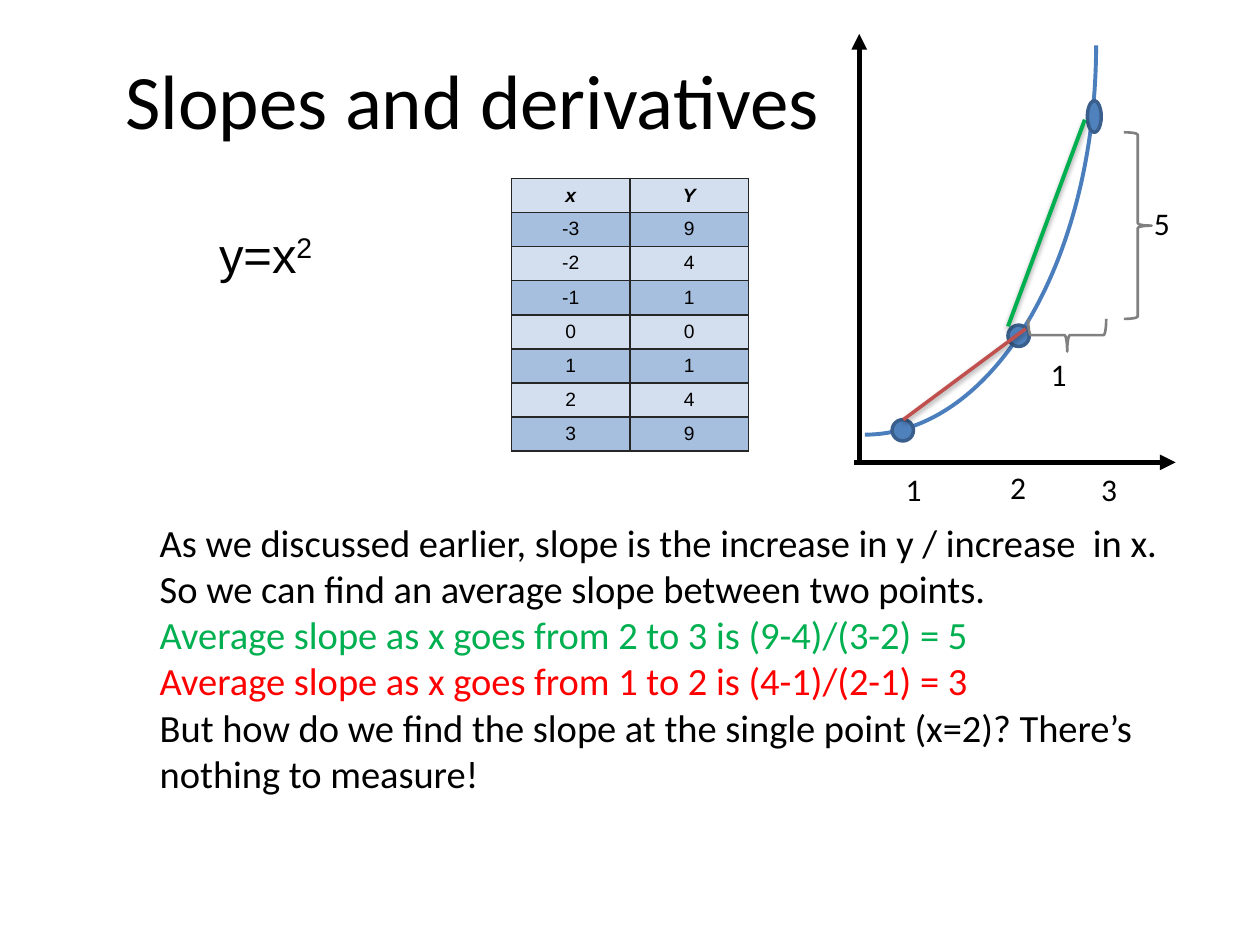
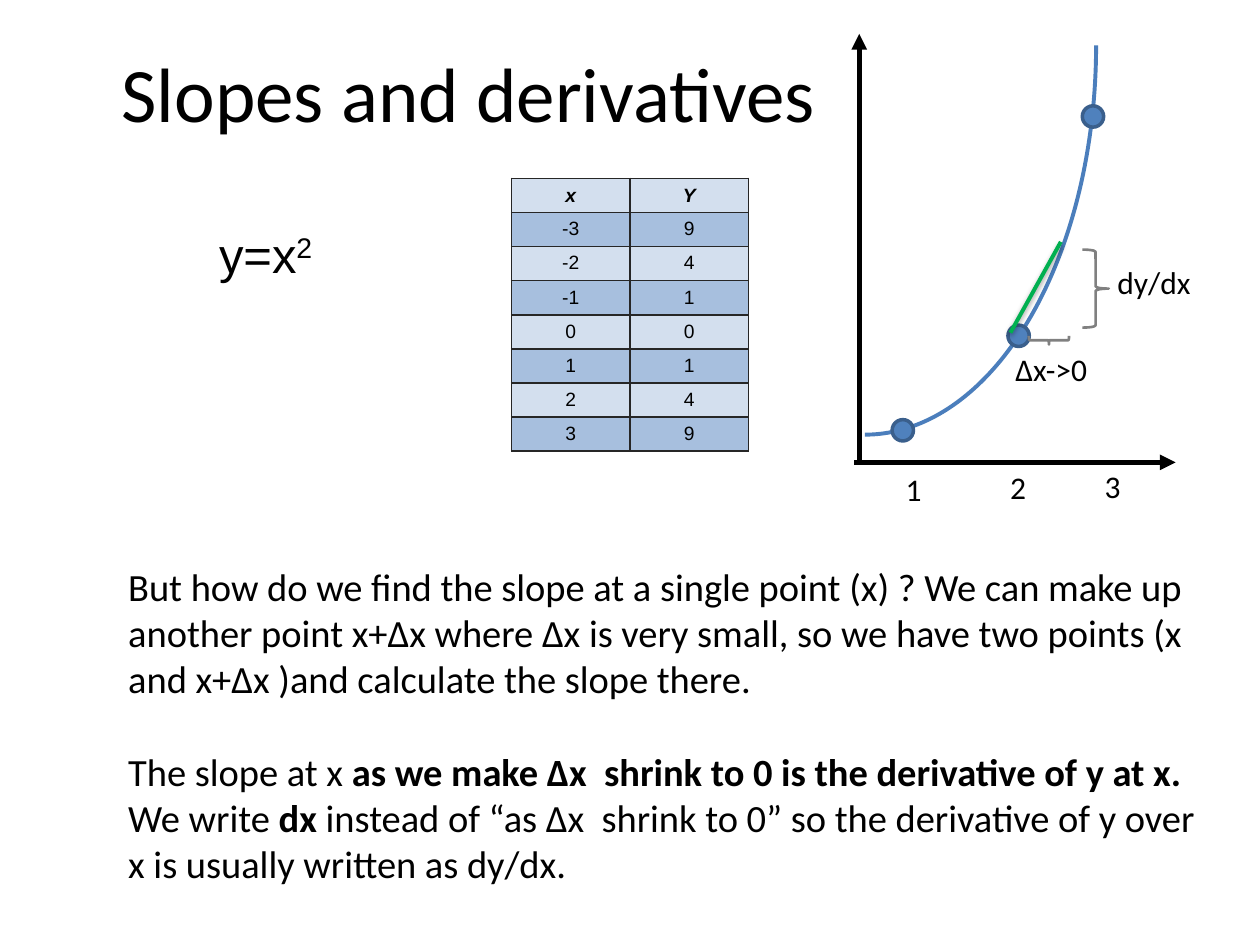
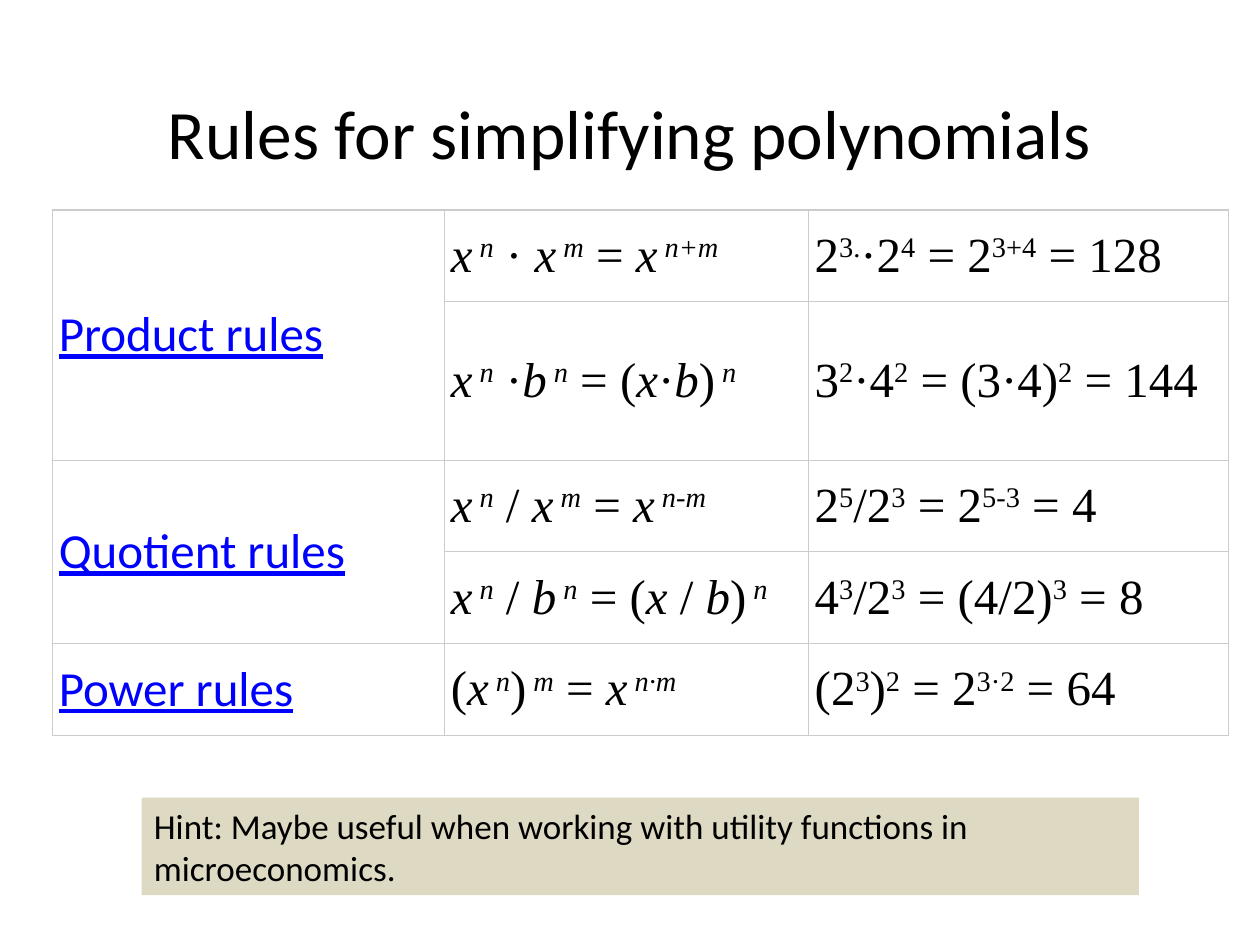
from lxml import etree
from pptx import Presentation
from pptx.dml.color import RGBColor
from pptx.enum.shapes import MSO_CONNECTOR, MSO_SHAPE
from pptx.enum.text import MSO_ANCHOR, MSO_AUTO_SIZE, PP_ALIGN
from pptx.oxml.ns import qn
from pptx.util import Pt

STRAIGHT = MSO_CONNECTOR.STRAIGHT
ARC, OVAL = MSO_SHAPE.ARC, MSO_SHAPE.OVAL
BRACE, RECTANGLE = MSO_SHAPE.LEFT_BRACE, MSO_SHAPE.RECTANGLE
TOP, MIDDLE = MSO_ANCHOR.TOP, MSO_ANCHOR.MIDDLE
LEFT, CENTER = PP_ALIGN.LEFT, PP_ALIGN.CENTER
GROW = MSO_AUTO_SIZE.SHAPE_TO_FIT_TEXT

COLORS = {
    "text": "000000", "green": "00B050", "red": "FF0000", "link": "0000FF",
    "curve": "4B7EBC", "point": "4F81BD", "point_edge": "3A5F8C",
    "red_chord": "C0504D", "brace": "808080", "hint": "DDD9C3",
    "light_row": "D3DFEE", "dark_row": "A7BFDE", "grid": "262626",
    "white": "FFFFFF", "rule_grid": "CCCCCC",
}
FORMATS = {
    "title": {"name": "Calibri", "size": Pt(44)},
    "long_title": {"name": "Calibri", "size": Pt(39.6)},
    "formula": {"name": "Arial", "size": Pt(28)},
    "body": {"name": "Calibri", "size": Pt(22)},
    "label": {"name": "Calibri", "size": Pt(18)},
    "hint": {"name": "Calibri", "size": Pt(20)},
    "value": {"name": "Arial", "size": Pt(11)},
    "rule_name": {"name": "Calibri", "size": Pt(28), "underline": True},
    "rule": {"name": "Times New Roman", "size": Pt(28)},
}
MARKS = {"*": "bold", "~": "italic", "^": "superscript"}

VALUE_ROWS = [("*~x~*", "*~Y~*")] + [(str(x), str(x * x)) for x in range(-3, 4)]
RULE_ROWS = [
    ("Product rules", "~x^ n^~ · ~x^ m^~ = ~x^ n+m^~", "2^3.^·2^4^ = 2^3+4^ = 128"),
    ("", "~x^ n^~ ·~b^ n^~ = (~x~·~b~)~^ n^~", "3^2^·4^2^ = (3·4)^2^ = 144"),
    ("Quotient rules", "~x^ n^~ / ~x^ m^~ = ~x^ n~-~m^~", "2^5^/2^3^ = 2^5-3^ = 4"),
    ("", "~x^ n^~ / ~b^ n^~ = (~x ~/~ b~)~^ n^~", "4^3^/2^3^ = (4/2)^3^ = 8"),
    ("Power rules", "(~x^ n^~)~^ m^~ = ~x^ n·m^~", "(2^3^)^2^ = 2^3·2^ = 64"),
]
RULE_WIDTHS = [224, 208, 240]
RULE_HEIGHTS = [52.4, 90.6, 52.4, 52.4, 52.4]


def rgb(color):
    return RGBColor.from_string(COLORS[color])


def points(*lengths):
    return [Pt(length) for length in lengths]


def set_values(target, values):
    for name, value in values.items():
        setattr(target, name, value)


def split_marks(text):
    """Yield (piece, active styles); each mark switches its style on or off."""
    active, piece = set(), ""
    for letter in text:
        if letter in MARKS:
            if piece:
                yield piece, set(active)
            active ^= {MARKS[letter]}
            piece = ""
        else:
            piece += letter
    if piece:
        yield piece, active


def write_paragraph(paragraph, text, style, color="text", align=LEFT, space_before=0):
    set_values(paragraph, {"alignment": align, "space_before": Pt(space_before)})
    for piece, active in split_marks(text):
        run = paragraph.add_run()
        run.text = piece
        set_values(run.font, FORMATS[style])
        set_values(run.font, {"bold": "bold" in active, "italic": "italic" in active})
        run.font.color.rgb = rgb(color)
        if "superscript" in active:
            run._r.get_or_add_rPr().set("baseline", "30000")


def write_paragraphs(frame, paragraphs, style):
    """Fill a text frame from (text, options) pairs."""
    for index, (text, options) in enumerate(paragraphs):
        paragraph = frame.add_paragraph() if index else frame.paragraphs[0]
        write_paragraph(paragraph, text, style, **options)


def add_text(slide, box, paragraphs, style, anchor=TOP, wrap=True):
    frame = slide.shapes.add_textbox(*points(*box)).text_frame
    set_values(frame, {"word_wrap": wrap, "auto_size": GROW, "vertical_anchor": anchor})
    write_paragraphs(frame, paragraphs, style)
    return frame


def add_title(slide, left, top, text, style="title", bottom_margin=3.6):
    frame = add_text(slide, (left, top, 648, 90), [(text, {"align": CENTER})], style, MIDDLE)
    set_values(frame, {"auto_size": MSO_AUTO_SIZE.NONE, "margin_bottom": Pt(bottom_margin)})


def add_label(slide, left, top, text, width=58.3, wrap=True):
    add_text(slide, (left, top, width, 28.8), [(text, {})], "label", wrap=wrap)


def add_shape(slide, kind, box, fill=None, line=None, width=0, rotation=0):
    shape = slide.shapes.add_shape(kind, *points(*box))
    shape.shadow.inherit = False
    shape.rotation = rotation
    if fill:
        shape.fill.solid()
        shape.fill.fore_color.rgb = rgb(fill)
    else:
        shape.fill.background()
    if line:
        shape.line.color.rgb = rgb(line)
        shape.line.width = Pt(width)
    else:
        shape.line.fill.background()
    return shape


def add_point(slide, x, y, width=12.2, height=12.2):
    box = (x - width / 2, y - height / 2, width, height)
    add_shape(slide, OVAL, box, "point", "point_edge", 2)


def add_brace(slide, box, rotation):
    add_shape(slide, BRACE, box, line="brace", width=1.5, rotation=rotation)


def add_line(slide, start, end, color, width):
    """Draw a straight line and return it with its empty effect list."""
    line = slide.shapes.add_connector(STRAIGHT, *points(*start, *end))
    line.line.color.rgb = rgb(color)
    line.line.width = Pt(width)
    effects = etree.SubElement(line._element.spPr, qn("a:effectLst"))
    return line, effects


def add_axis(slide, start, end):
    line, _ = add_line(slide, start, end, "text", 3)
    etree.SubElement(line.line._get_or_add_ln(), qn("a:tailEnd"), type="triangle")


def add_chord(slide, start, end, color, width=2.25):
    _, effects = add_line(slide, start, end, color, width)
    shadow = etree.SubElement(effects, qn("a:outerShdw"), blurRad="40000",
                              dist="20000", dir="5400000", rotWithShape="0")
    shade = etree.SubElement(shadow, qn("a:srgbClr"), val=COLORS["text"])
    etree.SubElement(shade, qn("a:alpha"), val="38000")


def format_cell(cell, fill, grid, grid_width, margins, anchor):
    properties = cell._tc.get_or_add_tcPr()
    for side in ("L", "R", "T", "B"):
        border = etree.SubElement(properties, qn(f"a:ln{side}"), w=str(Pt(grid_width)))
        solid = etree.SubElement(border, qn("a:solidFill"))
        etree.SubElement(solid, qn("a:srgbClr"), val=COLORS[grid])
    cell.fill.solid()
    cell.fill.fore_color.rgb = rgb(fill)
    across, down = points(*margins)
    set_values(cell, {"margin_left": across, "margin_right": across, "margin_top": down,
                      "margin_bottom": down, "vertical_anchor": anchor})


def add_table(slide, left, top, widths, heights):
    table = slide.shapes.add_table(
        len(heights), len(widths),
        *points(left, top, sum(widths), sum(heights))).table
    set_values(table, {"first_row": False, "horz_banding": False})
    for column, width in zip(table.columns, widths):
        column.width = Pt(width)
    for row, height in zip(table.rows, heights):
        row.height = Pt(height)
    return table


def add_value_table(slide):
    table = add_table(slide, 292.3, 102, [67.7] * 2, [19.5] * len(VALUE_ROWS))
    for row, texts in enumerate(VALUE_ROWS):
        for column, text in enumerate(texts):
            cell = table.cell(row, column)
            format_cell(cell, "dark_row" if row % 2 else "light_row", "grid", 1,
                        (5.4, 3.4), TOP if row else MIDDLE)
            write_paragraph(cell.text_frame.paragraphs[0], text, "value", align=CENTER)


def add_rule_table(slide):
    table = add_table(slide, 30, 120, RULE_WIDTHS, RULE_HEIGHTS)
    for row, texts in enumerate(RULE_ROWS):
        for column, text in enumerate(texts):
            cell = table.cell(row, column)
            format_cell(cell, "white", "rule_grid", 0.75, (3.6, 3.6), MIDDLE)
            style, color = ("rule", "text") if column else ("rule_name", "link")
            write_paragraph(cell.text_frame.paragraphs[0], text, style, color)
    for row in (0, 2):
        table.cell(row, 0).merge(table.cell(row + 1, 0))


def add_parabola(slide, last_point, last_label):
    """Draw the value table, the formula and the curve with its axes and points."""
    add_value_table(slide)
    add_text(slide, (118.1, 124.6, 163.4, 41), [("y=x^2^", {})], "formula", MIDDLE)
    curve = add_shape(slide, ARC, (362.2, -196.6, 264.2, 445), line="curve", width=2.25)
    curve._element.spPr.find(qn("a:xfrm")).set("flipV", "1")
    for point in ((515.9, 245.9), (582.1, 191.9), last_point):
        add_point(slide, *point)
    add_axis(slide, (491, 264.2), (491, 19.4))
    add_axis(slide, (488.2, 264.2), (671.8, 264.2))
    labels = ((510.5, 265), (570.2, 264.2), last_label)
    for number, (left, top) in enumerate(labels, start=1):
        add_label(slide, left, top, str(number), 23.8, wrap=False)


def build_average_slope(slide):
    add_title(slide, -54, 11.5, "Slopes and derivatives")
    add_parabola(slide, (625.3, 66.6, 7.9, 18), (622.1, 265))
    add_chord(slide, (586.1, 187.9), (516.2, 239.8), "red_chord", 2)
    add_chord(slide, (619.9, 68.4), (576, 186.5), "green")
    add_brace(slide, (600.5, 169.2, 18.7, 44.6), 270)
    add_label(slide, 593.3, 199.4, "1")
    add_brace(slide, (642.2, 75.6, 15.8, 106.6), 180)
    add_label(slide, 652.3, 113, "5")
    add_text(slide, (84.2, 293, 617.8, 232.6), [
        ("As we discussed earlier, slope is the increase in y / increase  in x.", {}),
        ("So we can find an average slope between two points.", {}),
        ("Average slope as x goes from 2 to 3 is (9-4)/(3-2) = 5", {"color": "green"}),
        ("Average slope as x goes from 1 to 2 is (4-1)/(2-1) = 3", {"color": "red"}),
        ("But how do we find the slope at the single point (x=2)? "
         "There’s nothing to measure!", {}),
    ], "body")


def build_point_slope(slide):
    add_title(slide, -56.2, 7.2, "Slopes and derivatives")
    add_parabola(slide, (624.6, 66.6), (624.2, 263.5))
    add_chord(slide, (606.2, 138.2), (577.4, 190.1), "green")
    add_brace(slide, (596.9, 182.9, 5, 23), 270)
    add_label(slide, 573.1, 196.6, "Δx->0")
    add_brace(slide, (618.5, 142.6, 15.1, 44.6), 180)
    add_label(slide, 631.4, 146.9, "dy/dx")
    add_text(slide, (66.2, 318.2, 624.2, 193.7), [
        ("But how do we find the slope at a single point (x) ? We can make up another "
         "point x+Δx where Δx is very small, so we have two points (x and x+Δx )and "
         "calculate the slope there.", {}),
        ("The slope at x *as we make Δx  shrink to 0 is the derivative of y at x.*",
         {"space_before": 26.4}),
        ("We write *dx* instead of “as Δx  shrink to 0” so the derivative of y over x "
         "is usually written as dy/dx.", {}),
    ], "body")


def build_rules(slide):
    add_title(slide, 36, 48.2, "Rules for simplifying polynomials", "long_title", 39.6)
    add_rule_table(slide)
    hint = add_shape(slide, RECTANGLE, (80.9, 455.8, 570, 55.7), "hint")
    hint.text_frame.word_wrap = True
    write_paragraphs(hint.text_frame, [
        ("Hint: Maybe useful when working with utility functions in microeconomics.", {}),
    ], "hint")


def main():
    presentation = Presentation()
    set_values(presentation, {"slide_width": Pt(720), "slide_height": Pt(540)})
    for build in (build_average_slope, build_point_slope, build_rules):
        build(presentation.slides.add_slide(presentation.slide_layouts[6]))
    presentation.save("out.pptx")


if __name__ == "__main__":
    main()
